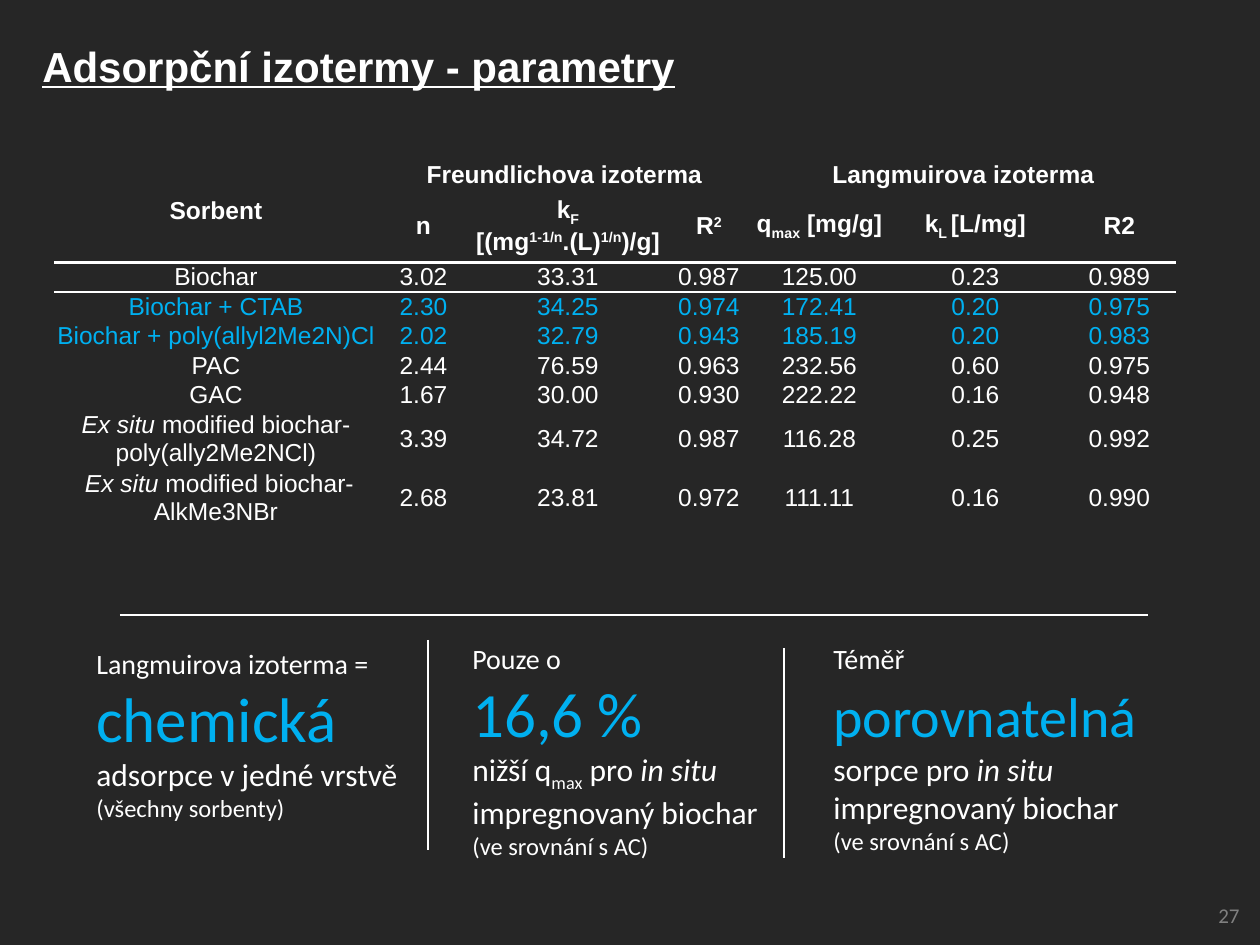
from dataclasses import dataclass

from lxml import etree
from pptx import Presentation
from pptx import util as u
from pptx.dml.color import RGBColor
from pptx.enum import shapes, text
from pptx.oxml import ns


@dataclass(frozen=True)
class Theme:
    ground: str = "262626"
    ink: str = "FFFFFF"
    accent: str = "00B0F0"
    muted: str = "808080"
    heading_font: str = "Arial"
    body_font: str = "Calibri"
    title: int = 24
    cell: int = 14
    number: int = 12
    lead: int = 16
    key: int = 36
    key_small: int = 32
    detail: int = 18
    note: int = 14


THEME = Theme()
SUB, SUP = -25000, 30000
NO_GRID_STYLE = "{2D5ABB26-0587-4C30-8999-92F81FD0307C}"
CENTER, RIGHT = text.PP_ALIGN.CENTER, text.PP_ALIGN.RIGHT
MIDDLE = text.MSO_ANCHOR.MIDDLE

COLUMNS = [324, 91, 198, 84, 137, 175, 113]
ROWS = [26, 73] + [25] * 7
EX_SITU = ("Ex situ ", {"italic": True})
HEADERS = [
    ["n"],
    ["k", ("F ", {"baseline": SUB}), "[(mg", ("1-1/n", {"baseline": SUP}),
     ".(L)", ("1/n", {"baseline": SUP}), ")/g]"],
    ["R", ("2", {"baseline": SUP})],
    ["q", ("max", {"baseline": SUB}), " [mg/g]"],
    ["k", ("L ", {"baseline": SUB}), "[L/mg]"],
    ["R2"],
]
SORBENTS = [
    (["Biochar"], "3.02 33.31 0.987 125.00 0.23 0.989", THEME.ink),
    (["Biochar + CTAB"], "2.30 34.25 0.974 172.41 0.20 0.975", THEME.accent),
    (["Biochar + poly(allyl2Me2N)Cl"], "2.02 32.79 0.943 185.19 0.20 0.983", THEME.accent),
    (["PAC"], "2.44 76.59 0.963 232.56 0.60 0.975", THEME.ink),
    (["GAC"], "1.67 30.00 0.930 222.22 0.16 0.948", THEME.ink),
    ([EX_SITU, "modified biochar-poly(ally2Me2NCl)"],
     "3.39 34.72 0.987 116.28 0.25 0.992", THEME.ink),
    ([" ", EX_SITU, "modified biochar-AlkMe3NBr"],
     "2.68 23.81 0.972 111.11 0.16 0.990", THEME.ink),
]

IN_SITU = ("in situ ", {"italic": True})
FINDINGS = [
    ((84, 640, 377, 190), ["Langmuirova izoterma ="], ["chemická"],
     ["adsorpce v jedné vrstvě"], ["(všechny sorbenty)"]),
    ((460, 635, 354, 240), ["Pouze o"], ["16,6 %"],
     ["nižší q", ("max", {"baseline": SUB}), " pro ", IN_SITU, "impregnovaný biochar"],
     ["(ve srovnání s AC)"]),
    ((821, 635, 370, 240), ["Téměř"],
     [("porovnatelná", {"size": THEME.key_small}), " "],
     ["sorpce pro ", IN_SITU, "impregnovaný biochar"], ["(ve srovnání s AC)"]),
]
RULES = [(120, 615, 1148, 615), (428, 640, 428, 850), (784, 648, 784, 858)]


def px(length):
    return u.Emu(round(length * 914400 / 126))


def place(shape, box):
    shape.left, shape.top, shape.width, shape.height = map(px, box)


def add_span(para, words, *, size, font=THEME.body_font, color=THEME.ink,
             bold=False, italic=False, underline=False, baseline=0):
    span = para.add_run()
    span.text = words
    span.font.size = u.Pt(size)
    span.font.name = font
    span.font.color.rgb = RGBColor.from_string(color)
    span.font.bold, span.font.italic, span.font.underline = bold, italic, underline
    if baseline:
        span.font._element.set("baseline", str(baseline))


def write(para, parts, align=None, **style):
    para.alignment = align
    for part in parts:
        words, extra = (part, {}) if isinstance(part, str) else part
        add_span(para, words, **{**style, **extra})


def add_title(page, box):
    title = page.shapes.title
    place(title, box)
    frame = title.text_frame
    frame.auto_size = text.MSO_AUTO_SIZE.NONE
    frame.vertical_anchor = text.MSO_ANCHOR.TOP
    write(frame.paragraphs[0], ["Adsorpční izotermy - parametry"], CENTER,
          size=THEME.title, font=THEME.heading_font, bold=True, underline=True)


def add_frame(page, box):
    frame = page.shapes.add_textbox(*map(px, box)).text_frame
    frame.word_wrap = True
    return frame


def add_border(cell, side):
    line = etree.Element(ns.qn(f"a:ln{side}"), w=str(u.Pt(1.5)))
    fill = etree.SubElement(line, ns.qn("a:solidFill"))
    etree.SubElement(fill, ns.qn("a:srgbClr"), val=THEME.ink)
    cell._tc.get_or_add_tcPr().insert(0, line)


def fill_cell(cell, parts, **style):
    write(cell.text_frame.paragraphs[0], parts, CENTER,
          size=THEME.cell, font=THEME.heading_font, **style)


def add_isotherm_table(page, box):
    table = page.shapes.add_table(len(ROWS), len(COLUMNS), *map(px, box)).table
    table.first_row = table.horz_banding = False
    table._tbl.tblPr.find(ns.qn("a:tableStyleId")).text = NO_GRID_STYLE
    for column, width in zip(table.columns, COLUMNS):
        column.width = px(width)
    for row, height in zip(table.rows, ROWS):
        row.height = px(height)
    for cell in table.iter_cells():
        cell.fill.solid()
        cell.fill.fore_color.rgb = RGBColor.from_string(THEME.ground)
        cell.vertical_anchor = MIDDLE
        cell.margin_left = cell.margin_right = cell.margin_top = cell.margin_bottom = 0

    for start, end, heading in [((0, 0), (1, 0), "Sorbent"),
                                ((0, 1), (0, 3), "Freundlichova izoterma"),
                                ((0, 4), (0, 6), "Langmuirova izoterma")]:
        table.cell(*start).merge(table.cell(*end))
        fill_cell(table.cell(*start), [heading], bold=True)
    for index, parts in enumerate(HEADERS, 1):
        fill_cell(table.cell(1, index), parts, bold=True)
    for row, (name, values, color) in enumerate(SORBENTS, 2):
        for index, parts in enumerate([name] + [[value] for value in values.split()]):
            fill_cell(table.cell(row, index), parts, color=color)

    add_border(table.cell(0, 0), "B")
    for index in range(len(COLUMNS)):
        add_border(table.cell(1, index), "B")
        add_border(table.cell(2, index), "T")


def add_finding(page, box, *lines):
    frame = add_frame(page, box)
    styles = [(THEME.lead, THEME.ink), (THEME.key, THEME.accent),
              (THEME.detail, THEME.ink), (THEME.note, THEME.ink)]
    for index, (parts, (size, color)) in enumerate(zip(lines, styles)):
        para = frame.add_paragraph() if index else frame.paragraphs[0]
        write(para, parts, size=size, color=color)


def add_rule(page, ends):
    rule = page.shapes.add_connector(shapes.MSO_CONNECTOR.STRAIGHT, *map(px, ends))
    rule.line.color.rgb = RGBColor.from_string(THEME.ink)
    rule.line.width = u.Pt(1)
    etree.SubElement(rule._element.spPr, ns.qn("a:effectLst"))


def add_page_number(page, box):
    frame = add_frame(page, box)
    frame.vertical_anchor = MIDDLE
    write(frame.paragraphs[0], ["27"], RIGHT, size=THEME.number, color=THEME.muted)


def main():
    deck = Presentation()
    deck.slide_width, deck.slide_height = px(1260), px(945)
    page = deck.slides.add_slide(deck.slide_layouts.get_by_name("Title Only"))
    page.background.fill.solid()
    page.background.fill.fore_color.rgb = RGBColor.from_string(THEME.ground)

    add_page_number(page, (969, 890, 283, 50))
    add_title(page, (19, 34, 679, 63))
    add_isotherm_table(page, (54, 160, sum(COLUMNS), sum(ROWS)))
    for box, *lines in FINDINGS:
        add_finding(page, box, *lines)
    for ends in RULES:
        add_rule(page, ends)
    deck.save("out.pptx")


if __name__ == "__main__":
    main()
